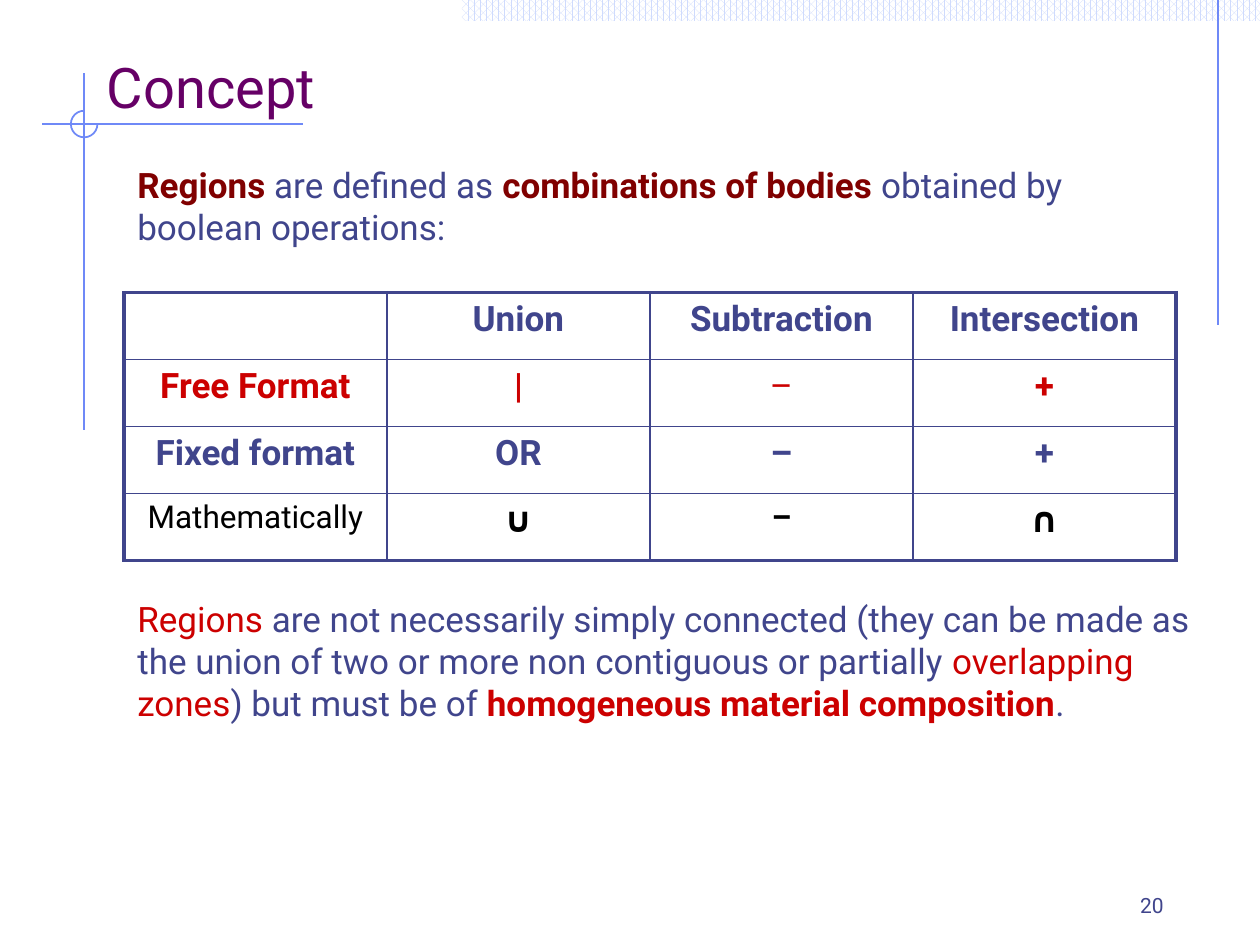
"""Build the "Concept" slide on regions and their boolean operations."""
from lxml.etree import SubElement
from pptx import Presentation
from pptx.dml.color import RGBColor
from pptx.enum.dml import MSO_PATTERN
from pptx.enum.shapes import MSO_CONNECTOR, MSO_SHAPE
from pptx.enum.text import MSO_ANCHOR, PP_ALIGN
from pptx.oxml import parse_xml
from pptx.oxml.ns import nsdecls, qn
from pptx.util import Pt

COLORS = {
    "text": "40458C",
    "title": "660066",
    "maroon": "800000",
    "red": "CC0000",
    "black": "000000",
    "rule": "6F89F7",
    "band": "CFDBFD",
    "white": "FFFFFF",
}


def write_runs(paragraph, size, runs, align=PP_ALIGN.LEFT):
    paragraph.alignment = align
    paragraph.font.name = "Roboto"
    paragraph.font.size = Pt(size)
    for text, color, bold in runs:
        run = paragraph.add_run()
        run.text = text
        run.font.bold = bold
        run.font.color.rgb = RGBColor.from_string(COLORS[color])


presentation = Presentation()
presentation.slide_width = Pt(720)
presentation.slide_height = Pt(540)
slide = presentation.slides.add_slide(presentation.slide_layouts[6])
shapes = slide.shapes

band = shapes.add_shape(MSO_SHAPE.RECTANGLE, Pt(264), Pt(0), Pt(456), Pt(12))
band.shadow.inherit = False
band.fill.patterned()
band.fill.pattern = MSO_PATTERN.PERCENT_70
band.fill.fore_color.rgb = RGBColor.from_string(COLORS["band"])
band.fill.back_color.rgb = RGBColor.from_string(COLORS["white"])
band.line.fill.background()

rules = [(696, 0, 696, 186), (173, 70.8, 24, 70.8), (47.8, 42, 47.8, 246)]
for ends in rules:
    rule = shapes.add_connector(MSO_CONNECTOR.STRAIGHT, *map(Pt, ends))
    rule.line.color.rgb = RGBColor.from_string(COLORS["rule"])
    rule.line.width = Pt(1)
    SubElement(rule._element.spPr, qn("a:effectLst"))

arc = shapes.add_shape(MSO_SHAPE.ARC, Pt(40.5), Pt(63.3), Pt(15.2), Pt(15.2))
arc.shadow.inherit = False
arc.adjustments[0] = 0
arc.adjustments[1] = 162
arc.fill.background()
arc.line.color.rgb = RGBColor.from_string(COLORS["rule"])
arc.line.width = Pt(1)

LEFT, RIGHT = PP_ALIGN.LEFT, PP_ALIGN.RIGHT
TOP, BOTTOM = MSO_ANCHOR.TOP, MSO_ANCHOR.BOTTOM
text_boxes = [
    ((546, 504, 126, 24), 7.2, BOTTOM, RIGHT, 12, [("20", "text", False)]),
    ((54, 24, 612, 48), 7.2, BOTTOM, LEFT, 32, [("Concept", "title", False)]),
    ((64.8, 90, 623.5, 56), 13.7, TOP, LEFT, 20, [
        ("Regions", "maroon", True),
        (" are defined as ", "text", False),
        ("combinations of bodies", "maroon", True),
        (" obtained by boolean operations:", "text", False),
    ]),
    ((64.8, 338, 623.5, 80), 13.7, TOP, LEFT, 20, [
        ("Regions", "red", False),
        (" are not necessarily simply connected (they can be made as the union"
         " of two or more non contiguous or partially ", "text", False),
        ("overlapping zones", "red", False),
        (") but must be of ", "text", False),
        ("homogeneous material composition", "red", True),
        (".", "text", False),
    ]),
]
for place, left_margin, anchor, align, size, runs in text_boxes:
    frame = shapes.add_textbox(*map(Pt, place)).text_frame
    frame.word_wrap = True
    frame.margin_left = Pt(left_margin)
    frame.vertical_anchor = anchor
    write_runs(frame.paragraphs[0], size, runs, align)

operations = [
    ("text", ["", "Union", "Subtraction", "Intersection"]),
    ("red", ["Free Format", "|", "–", "+"]),
    ("text", ["Fixed format", "OR", "–", "+"]),
    ("black", ["Mathematically", "∪", "–", "∩"]),
]
regular_cells = {(1, 2), (3, 0)}
small_cells = {(3, 0), (3, 2)}
table = shapes.add_table(4, 4, Pt(70.8), Pt(167.2), Pt(601.2), Pt(153)).table
table.first_row = False
table.horz_banding = False
for column in table.columns:
    column.width = Pt(150.3)
for row in table.rows:
    row.height = Pt(38.25)

for row_index, (color, labels) in enumerate(operations):
    for column_index, label in enumerate(labels):
        position = (row_index, column_index)
        cell = table.cell(*position)
        cell.fill.background()
        if label:
            size = 18 if position in small_cells else 20
            run = (label, color, position not in regular_cells)
            write_runs(cell.text_frame.paragraphs[0], size, [run], PP_ALIGN.CENTER)
        outer_sides = {
            "lnL": column_index == 0,
            "lnR": column_index == 3,
            "lnT": row_index == 0,
            "lnB": row_index == 3,
        }
        properties = cell._tc.get_or_add_tcPr()
        for order, (side, outer) in enumerate(outer_sides.items()):
            width = Pt(2.25 if outer else 1)
            properties.insert(order, parse_xml(
                f'<a:{side} {nsdecls("a")} w="{width}"><a:solidFill>'
                f'<a:srgbClr val="{COLORS["text"]}"/></a:solidFill></a:{side}>'
            ))

presentation.save("out.pptx")
